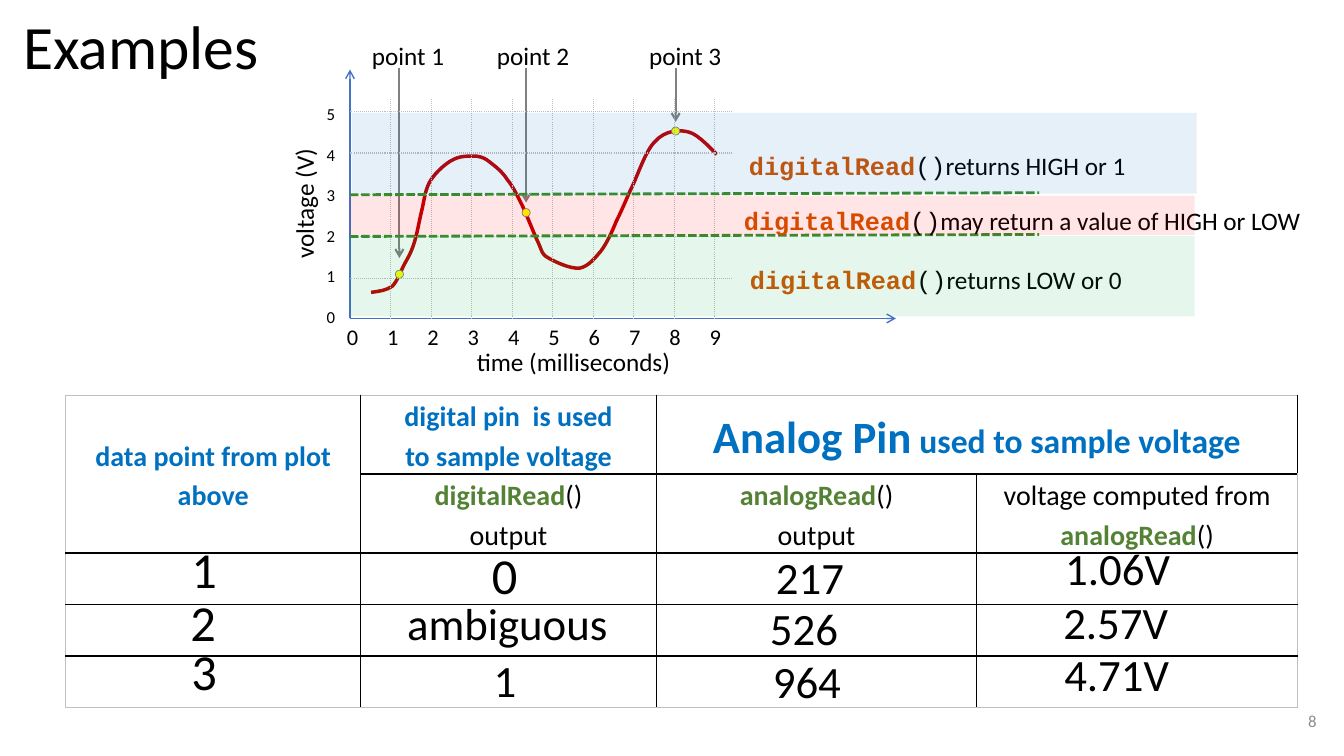
from lxml.etree import SubElement
from pptx import Presentation
from pptx.dml.color import RGBColor
from pptx.enum.dml import MSO_LINE
from pptx.enum.shapes import MSO_CONNECTOR, MSO_SHAPE
from pptx.enum.text import MSO_ANCHOR, PP_ALIGN
from pptx.oxml.ns import qn
from pptx.util import Pt

COLORS = {
    "black": "000000", "gray": "808080", "grid": "BFBFBF", "page": "8C8C8C",
    "axis": "4472C4", "wave": "C00000", "dot": "FFFF00", "dash": "3A8B2D",
    "code": "D35400", "head": "0070C0", "call": "548235",
    "high": "0070C0", "unsure": "FF0000", "low": "00B050",
}
WAVE = [
    (15.1, 159.1),
    (20.9, 158.4), (25.9, 157.7), (30.2, 154.8), (33.8, 151.2), (36, 144.7), (38.9, 139),
    (41.8, 133.9), (43.9, 130.3), (46.1, 123.1), (48.2, 116.6), (49.7, 106.6), (51.8, 98.6),
    (53.3, 91.4), (54, 85), (57.6, 79.2), (61.2, 73.4), (69.1, 66.2), (74.2, 64.1),
    (79.9, 61.2), (86.4, 61.9), (90.7, 61.9), (95, 62.6), (96.5, 63.4), (100.1, 66.2),
    (103.7, 69.1), (108.7, 72.7), (112.3, 78.5), (116.6, 83.5), (120.2, 91.4), (123.8, 98.6),
    (127.4, 106.6), (131.8, 118.1), (134.6, 123.8), (137.5, 130.3), (136.8, 131.8), (141.8, 134.6),
    (146.9, 137.5), (157.7, 142.6), (164.2, 141.8), (170.6, 140.4), (175, 134.6), (179.3, 129.6),
    (183.6, 123.8), (187.2, 115.9), (190.1, 108.7), (193.7, 101.5), (195.8, 96.5), (200.2, 86.4),
    (205.2, 77), (211, 57.6), (218.2, 51.1), (224.6, 43.9), (234.7, 42.5), (241.9, 44.6),
    (249.1, 46.1), (259.9, 59), (262.1, 60.5),
]
POINTS = [
    ("point 1", 8.6, 35.3, 146.2, 134.6),
    ("point 2", 97.9, 125.8, 102.2, 95),
    ("point 3", 206.6, 232.6, 43.9, 37.4),
]
BANDS = [
    ("low", "returns LOW or 0", 278.6, 135.4, 282, 0, 118.8, 57.6),
    ("unsure", "may return a value of HIGH or LOW", 274.3, 93.6, 415.5, 0, 90, 28.1),
    ("high", "returns HIGH or 1", 277.9, 54, 286, 1.4, 31, 57.6),
]
ANSWERS = [
    ("1", 82.8, 98.6, 33, 36), ("0", 297.4, 103, 33, 36),
    ("217", 500.4, 106.6, 64, 32), ("1.06V", 707, 100.8, 90, 32),
    ("2", 82.1, 136.8, 33, 36), ("ambiguous", 236.9, 139.7, 159, 32),
    ("526", 496.1, 143.3, 64, 32), ("2.57V", 705.6, 139, 90, 32),
    ("3", 82.8, 171.4, 33, 36), ("1", 298.8, 180.7, 31, 32),
    ("964", 498.2, 181.4, 64, 32), ("4.71V", 706.3, 176.4, 90, 32),
]


def rgb(name):
    return RGBColor.from_string(COLORS[name])


def set_font(font, size, color="black", bold=False, name="Calibri"):
    font.size, font.bold, font.name = Pt(size), bold, name
    font.color.rgb = rgb(color)


def add_runs(p, runs):
    for text, *style in runs:
        r = p.add_run()
        r.text = text
        set_font(p.font if len(runs) == 1 else r.font, *style)


def add_text(slide, x, y, w, h, runs, wrap=False, align=PP_ALIGN.LEFT):
    sp = slide.shapes.add_textbox(Pt(x), Pt(y), Pt(w), Pt(h))
    sp.text_frame.word_wrap = wrap
    p = sp.text_frame.paragraphs[0]
    p.alignment = align
    add_runs(p, runs)
    return sp


def add_line(slide, x1, y1, x2, y2, color, width, dash=None, arrow=False):
    line = slide.shapes.add_connector(MSO_CONNECTOR.STRAIGHT, Pt(x1), Pt(y1), Pt(x2), Pt(y2))
    line.line.color.rgb = rgb(color)
    line.line.width = Pt(width)
    if dash:
        line.line.dash_style = dash
    if arrow:
        SubElement(line.line._get_or_add_ln(), qn("a:tailEnd"), type="arrow")
    SubElement(line._element.spPr, qn("a:effectLst"))


def add_wave(slide, x, y):
    fb = slide.shapes.build_freeform(Pt(x + WAVE[0][0]), Pt(y + WAVE[0][1]))
    fb.add_line_segments([(Pt(x + a), Pt(y + b)) for a, b in WAVE[1:]], close=False)
    sp = fb.convert_to_shape()
    sp.shadow.inherit = False
    sp.fill.background()
    sp.line.color.rgb = rgb("wave")
    sp.line.width = Pt(2.5)
    outline = sp._element.find(".//" + qn("a:path"))
    steps = outline.findall(qn("a:lnTo"))
    for i in range(0, len(steps), 3):
        curve = SubElement(outline, qn("a:cubicBezTo"))
        for step in steps[i:i + 3]:
            curve.append(step[0])
            outline.remove(step)


def add_point(slide, x, y, label, label_x, px, py, tip):
    d = 5.8
    sp = slide.shapes.add_shape(MSO_SHAPE.OVAL, Pt(x + px - d / 2), Pt(y + py - d / 2), Pt(d), Pt(d))
    sp.shadow.inherit = False
    sp.fill.solid()
    sp.fill.fore_color.rgb = rgb("dot")
    sp.line.color.rgb = rgb("gray")
    sp.line.width = Pt(0.5)
    add_line(slide, x + px, y - 1.4, x + px, y + tip, "gray", 1.5, arrow=True)
    add_text(slide, x + label_x, y - 24.5, 67, 29, [(label, 18)])


def add_axes(slide, x, y, w, h, volt_y):
    add_line(slide, x, y + h, x, y, "axis", 1, arrow=True)
    add_line(slide, x, y + h, x + w, y + h, "axis", 1, arrow=True)
    add_text(slide, x + 83.5, y + 194.4, 154, 29, [("time (milliseconds)", 18)])
    sp = add_text(slide, x - 80, y + 81.4, 94.3, 29, [("voltage (V)", 18)], align=PP_ALIGN.CENTER)
    sp.rotation = 270
    ticks = slide.shapes.add_textbox(Pt(x - 9.4), Pt(y + h), Pt(284.4), Pt(26.6))
    ticks.text_frame.word_wrap = False
    p = ticks.text_frame.paragraphs[0]
    tabs = SubElement(p._p.get_or_add_pPr(), qn("a:tabLst"))
    for i in range(1, 10):
        SubElement(tabs, qn("a:tab"), pos=str(Pt(28.8 * i)), algn="l")
    add_runs(p, [("\t".join(map(str, range(10))), 16)])
    tf = add_text(slide, x - 23.8, y + 20.9, 21, 167, [("5", 12)]).text_frame
    for v in range(4, -1, -1):
        p = tf.add_paragraph()
        p.space_before = Pt(14.6)
        add_runs(p, [(str(v), 12)])
    for v in range(1, 6):
        add_line(slide, x + 273, volt_y(v), x, volt_y(v), "grid", 0.75, MSO_LINE.ROUND_DOT)
    for t in range(1, 10):
        tx = x + 28.95 * t
        add_line(slide, tx, y + 20.9, tx, y + h, "grid", 0.75, MSO_LINE.ROUND_DOT)


def add_band(slide, x, y, color, result, tx, ty, tw, bx, by, bh):
    runs = [("digitalRead", 18, "code", True, "Courier New"),
            ("()", 18, "black", False, "Courier New"), (result, 18)]
    add_text(slide, x + tx, y + ty, tw, 29, runs)
    sp = slide.shapes.add_shape(MSO_SHAPE.RECTANGLE, Pt(x + bx), Pt(y + by), Pt(603.4), Pt(bh))
    sp.shadow.inherit = False
    sp.line.fill.background()
    sp.fill.solid()
    sp.fill.fore_color.rgb = rgb(color)
    SubElement(sp._element.spPr.find(".//" + qn("a:srgbClr")), qn("a:alpha"), val="10000")


def add_plot(slide, x, y, w, h):
    def volt_y(v):
        return y + h + 1 - 29.8 * v

    add_wave(slide, x, y)
    for point in POINTS:
        add_point(slide, x, y, *point)
    add_axes(slide, x, y, w, h, volt_y)
    for v in (2, 3):
        add_line(slide, x, volt_y(v), x + 492.2, volt_y(v) - 1.4, "dash", 2, MSO_LINE.SQUARE_DOT)
    for band in BANDS:
        add_band(slide, x, y, *band)


def set_borders(cell, outer):
    tcPr = cell._tc.get_or_add_tcPr()
    for side in ("L", "R", "T", "B"):
        ln = SubElement(tcPr, qn("a:ln" + side), w=str(Pt(0.5 if side in outer else 1)))
        fill = SubElement(ln, qn("a:solidFill"))
        SubElement(fill, qn("a:srgbClr"), val=COLORS["grid" if side in outer else "black"])


def add_results(slide, x, y, w, h):
    cols, rows = [211, 211, 229, 229], [56.4, 56.4, 36.8, 36.8, 36.8]
    table = slide.shapes.add_table(5, 4, Pt(x), Pt(y), Pt(w), Pt(h)).table
    table.first_row = table.horz_banding = False
    for column, width in zip(table.columns, cols):
        column.width = Pt(width)
    for row, height in zip(table.rows, rows):
        row.height = Pt(height)
    for i in range(5):
        for j in range(4):
            cell = table.cell(i, j)
            edges = {"T": i == 0, "B": i == 4, "L": j == 0, "R": j == 3}
            set_borders(cell, [side for side, on in edges.items() if on])
            cell.fill.background()
            cell.margin_left = cell.margin_right = Pt(5)
            cell.margin_top = cell.margin_bottom = 0
            cell.vertical_anchor = MSO_ANCHOR.MIDDLE
    table.cell(0, 0).merge(table.cell(1, 0))
    table.cell(0, 2).merge(table.cell(0, 3))
    head, call = (20, "head", True), (20, "call", True)
    analog = [("analogRead", *call), ("()", 20)]
    headings = {
        (0, 0): [[("data point from plot above", *head)]],
        (0, 1): [[("digital pin  is used", *head)], [("to sample voltage", *head)]],
        (0, 2): [[("Analog Pin", 32, "head", True), (" used to sample voltage", 24, "head", True)]],
        (1, 1): [[("digitalRead", *call), ("()", 20)], [("output", 20)]],
        (1, 2): [analog, [("output", 20)]],
        (1, 3): [[("voltage computed from", 20)], analog],
    }
    for (i, j), lines in headings.items():
        tf = table.cell(i, j).text_frame
        for k, runs in enumerate(lines):
            p = tf.add_paragraph() if k else tf.paragraphs[0]
            p.alignment, p.line_spacing = PP_ALIGN.CENTER, 1.15
            add_runs(p, runs)
    for text, ax, ay, aw, size in ANSWERS:
        add_text(slide, x + ax, y + ay, aw, size * 1.22 + 7.2, [(text, size)])


def main():
    prs = Presentation()
    prs.slide_width, prs.slide_height = Pt(960), Pt(540)
    slide = prs.slides.add_slide(prs.slide_layouts[6])
    add_results(slide, 46.8, 282.2, 880, 223.2)
    add_plot(slide, 250, 49.7, 390, 177.8)
    add_text(slide, 9.4, 2.2, 250, 54, [("Examples", 44)], wrap=True)
    page = add_text(slide, 678, 500.4, 269.6, 28.8, [("8", 12, "page")], True, PP_ALIGN.RIGHT)
    page.text_frame.vertical_anchor = MSO_ANCHOR.MIDDLE
    prs.save("out.pptx")


if __name__ == "__main__":
    main()
